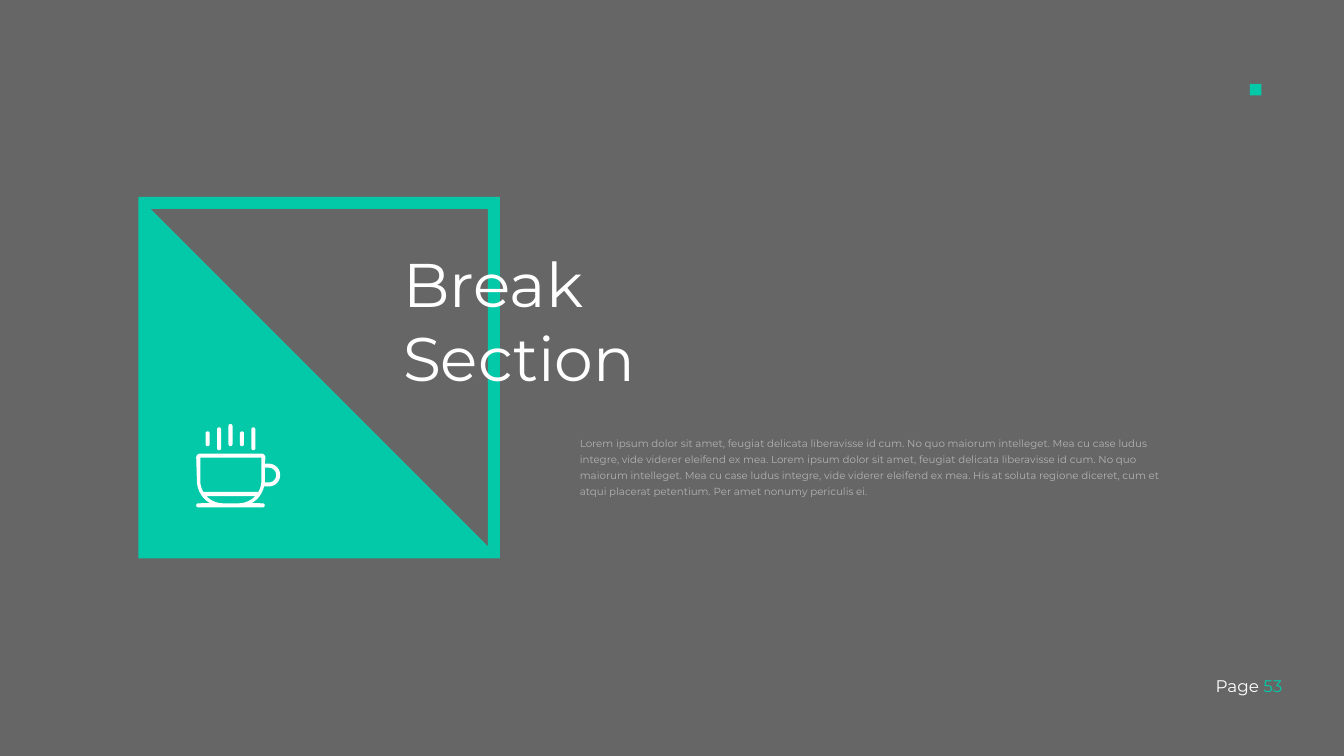
from math import cos, radians, sin

from lxml.etree import SubElement
from pptx import Presentation
from pptx.dml.color import RGBColor
from pptx.enum.shapes import MSO_SHAPE as Shape
from pptx.enum.text import MSO_AUTO_SIZE as AutoSize, PP_ALIGN as Align
from pptx.oxml.ns import qn
from pptx.util import Inches, Pt

BLACK = RGBColor(0x00, 0x00, 0x00)
WHITE = RGBColor(0xFF, 0xFF, 0xFF)
TEAL = RGBColor(0x03, 0xC9, 0xA9)

BODY = (
    "Lorem ipsum dolor sit amet, feugiat delicata liberavisse id cum. "
    "No quo maiorum intelleget. Mea cu case ludus integre, vide viderer eleifend ex mea. "
    "Lorem ipsum dolor sit amet, feugiat delicata liberavisse id cum. "
    "No quo maiorum intelleget. Mea cu case ludus integre, vide viderer eleifend ex mea. "
    "His at soluta regione diceret, cum et atqui placerat petentium. "
    "Per amet nonumy periculis ei."
)


def set_opacity(fill, percent):
    """Make a solid fill partly transparent."""
    color = fill._xPr.find(qn("a:solidFill"))[0]
    SubElement(color, qn("a:alpha")).set("val", str(percent * 1000))


def arc(x, y, radius, start, end, steps=12):
    """Points on a circle between two angles, clockwise from the right."""
    angles = [radians(start + (end - start) * i / steps) for i in range(steps + 1)]
    return [(x + radius * cos(a), y + radius * sin(a)) for a in angles]


def steam(x, top, bottom, radius=0.03):
    """Outline of an upright bar with round ends."""
    return arc(x, top + radius, radius, 180, 360) + arc(x, bottom - radius, radius, 0, 180)


def cup_outlines():
    """Cup with its saucer, the three openings in it, and the steam."""
    left, right, round_y = 3.32, 3.55, 7.15
    body = (
        arc(2.98, 6.81, 0.06, 180, 270)
        + arc(3.89, 6.81, 0.06, 270, 360)
        + [(3.94, 6.9)]
        + arc(4, 7.07, 0.17, -90, 90)
        + arc(right, round_y, 0.39, 13, 60)
        + arc(3.91, 7.52, 0.03, -90, 90)
        + arc(2.95, 7.52, 0.03, 90, 270)
        + arc(left, round_y, 0.39, 120, 180)
    )
    drink = arc(right, round_y, 0.34, 43, 90) + arc(left, round_y, 0.34, 90, 137)
    handle = [(3.94, 6.96)] + arc(4, 7.07, 0.11, -90, 90) + [(3.94, 7.18)]
    inside = (
        [(2.98, 6.81), (3.89, 6.81)]
        + arc(right, round_y, 0.34, 0, 30)
        + arc(left, round_y, 0.34, 150, 180)
    )
    spans = [(6.42, 6.64), (6.36, 6.7), (6.31, 6.64), (6.42, 6.64), (6.36, 6.7)]
    bars = [steam(3.09 + 0.17 * i, *span) for i, span in enumerate(spans)]
    return [body, drink, handle, inside] + bars


class SlideBuilder:
    font = "Montserrat"

    def __init__(self, slide):
        self.slide = slide

    def paint(self, shape, color, opacity=None):
        shape.shadow.inherit = False
        shape.fill.solid()
        shape.fill.fore_color.rgb = color
        if opacity:
            set_opacity(shape.fill, opacity)
        shape.line.fill.background()

    def rectangle(self, box, color, opacity=None):
        shape = self.slide.shapes.add_shape(Shape.RECTANGLE, *map(Inches, box))
        self.paint(shape, color, opacity)

    def outline(self, contours, color):
        """Draw closed contours as one shape; inner ones are holes."""
        contours = [[(Inches(x), Inches(y)) for x, y in points] for points in contours]
        builder = self.slide.shapes.build_freeform(*contours[0][0])
        for index, points in enumerate(contours):
            if index:
                builder.move_to(*points[0])
            builder.add_line_segments(points[1:], close=True)
        self.paint(builder.convert_to_shape(), color)

    def text(self, box, runs, size, opacity=None, **paragraph_format):
        frame = self.slide.shapes.add_textbox(*map(Inches, box)).text_frame
        frame.word_wrap = True
        frame.auto_size = AutoSize.SHAPE_TO_FIT_TEXT
        paragraph = frame.paragraphs[0]
        for name, value in paragraph_format.items():
            setattr(paragraph, name, value)
        for words, color in runs:
            run = paragraph.add_run()
            run.text = words
            for name, value in {"name": self.font, "size": Pt(size)}.items():
                setattr(run.font, name, value)
            run.font.fill.solid()
            run.font.fill.fore_color.rgb = color
            if opacity:
                set_opacity(run.font.fill, opacity)


def main():
    presentation = Presentation()
    presentation.slide_width = Inches(20)
    presentation.slide_height = Inches(11.25)
    builder = SlideBuilder(presentation.slides.add_slide(presentation.slide_layouts[6]))

    builder.rectangle((0, 0, 20, 11.25), BLACK, opacity=60)

    left, top, right, bottom, band = 2.06, 2.93, 7.44, 8.31, 0.18
    builder.outline([[(left, top), (right, bottom), (left, bottom)]], TEAL)
    builder.outline([[
        (left, top), (right, top), (right, bottom),
        (right - band, bottom - band), (right - band, top + band), (left + band, top + band),
    ]], TEAL)

    builder.text((5.9, 3.61, 4.96, 2.32), [("Break Section", WHITE)], 66)
    builder.text((17.42, 10.01, 1.76, 0.4), [("Page ", WHITE), ("53", TEAL)], 18,
                 alignment=Align.RIGHT)
    builder.rectangle((18.6, 1.25, 0.17, 0.17), TEAL)
    builder.text((8.53, 6.4, 8.89, 1.06), [(BODY, WHITE)], 11, opacity=50,
                 line_spacing=1.3, space_before=Pt(12))
    builder.outline(cup_outlines(), WHITE)

    presentation.save("out.pptx")


if __name__ == "__main__":
    main()
